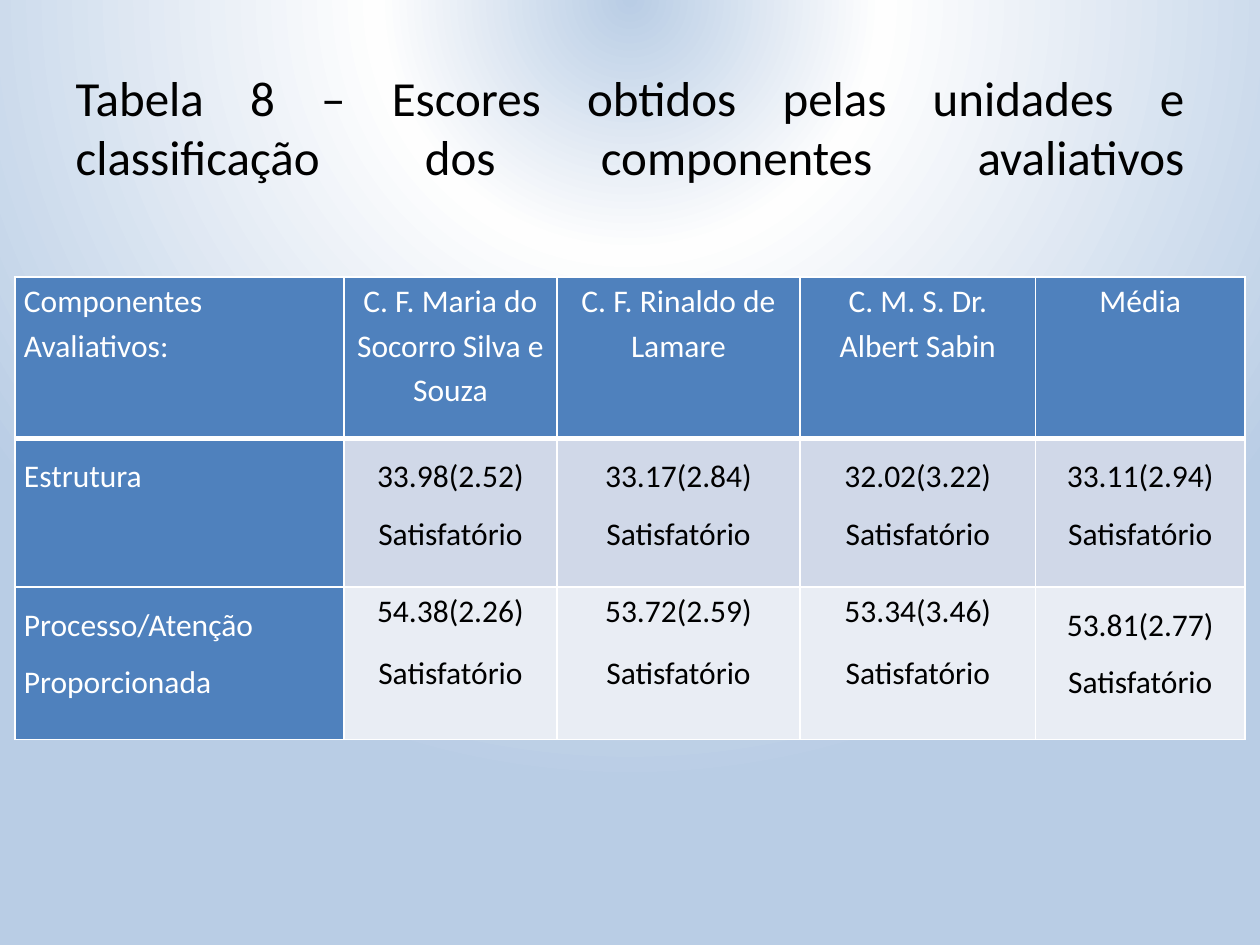
from lxml import etree
from pptx import Presentation
from pptx.dml.color import RGBColor
from pptx.enum.text import MSO_ANCHOR, PP_ALIGN
from pptx.oxml import parse_xml
from pptx.oxml.ns import nsdecls, qn
from pptx.util import Inches, Pt

LEFT, CENTER, JUSTIFY = PP_ALIGN.LEFT, PP_ALIGN.CENTER, PP_ALIGN.JUSTIFY
MIDDLE = MSO_ANCHOR.MIDDLE
TITLE_ONLY = 5
FONT = "Calibri"
COLORS = {
    "sky": "B9CDE5",
    "glow": "FEFEFE",
    "header": "4F81BD",
    "structure": "D0D8E8",
    "process": "E9EDF4",
    "light": "FFFFFF",
    "dark": "000000",
}

TITLE = "Tabela 8 – Escores obtidos pelas unidades e classificação dos componentes avaliativos"
HEADINGS = [
    "Componentes Avaliativos:",
    "C. F. Maria do Socorro Silva e Souza",
    "C. F. Rinaldo de Lamare",
    "C. M. S. Dr. Albert Sabin",
    "Média",
]
RATING = "Satisfatório"
COMPONENTS = [
    ("Estrutura", "structure",
     ["33.98(2.52)", "33.17(2.84)", "32.02(3.22)", "33.11(2.94)"]),
    ("Processo/Atenção Proporcionada", "process",
     ["54.38(2.26)", "53.72(2.59)", "53.34(3.46)", "53.81(2.77)"]),
]
COLUMN_WIDTHS = [2.61, 1.69, 1.93, 1.87, 1.66]
ROW_HEIGHTS = [1.28, 1.18, 1.21]


def rgb(name):
    return RGBColor.from_string(COLORS[name])


def set_background(slide):
    """Radial gradient centred above the top edge of the slide."""
    stops = "".join(
        f'<a:gs pos="{percent * 1000}"><a:srgbClr val="{COLORS[name]}"/></a:gs>'
        for percent, name in [(0, "sky"), (32, "glow"), (100, "sky")]
    )
    background = parse_xml(
        f'<p:bg {nsdecls("p", "a")}><p:bgPr><a:gradFill rotWithShape="1">'
        f'<a:gsLst>{stops}</a:gsLst><a:path path="circle">'
        '<a:fillToRect l="50000" t="-80000" r="50000" b="180000"/></a:path>'
        '</a:gradFill><a:effectLst/></p:bgPr></p:bg>'
    )
    slide.element.cSld.insert(0, background)


def style_paragraph(paragraph, size, color, align):
    paragraph.alignment = align
    font = paragraph.font
    font.name, font.size, font.bold = FONT, Pt(size), False
    font.color.rgb = rgb(color)


def add_title(slide, left, top, width, height):
    title = slide.shapes.title
    title.left, title.top = left, top
    title.width, title.height = width, height
    frame = title.text_frame
    frame.word_wrap = True
    frame.vertical_anchor = MIDDLE
    # The closing line break makes the last line stretch to both edges.
    frame.text = TITLE + "\v"
    style_paragraph(frame.paragraphs[0], 28, "dark", JUSTIFY)


def set_borders(cell, bottom=1):
    properties = cell._tc.get_or_add_tcPr()
    widths = {"lnL": 1, "lnR": 1, "lnT": 1, "lnB": bottom}
    for position, (side, width) in enumerate(widths.items()):
        line = etree.Element(qn(f"a:{side}"), w=str(Pt(width)))
        fill = etree.SubElement(line, qn("a:solidFill"))
        etree.SubElement(fill, qn("a:srgbClr"), val=COLORS["light"])
        properties.insert(position, line)


def fill_cell(cell, lines, fill, color, align, loose, bottom=1):
    """Loose text has 1.5 line spacing; other text has gaps after paragraphs."""
    cell.margin_left = cell.margin_right = Inches(0.07)
    cell.margin_top = cell.margin_bottom = 0
    cell.fill.solid()
    cell.fill.fore_color.rgb = rgb(fill)
    set_borders(cell, bottom)
    cell.text_frame.text = "\n".join(lines)
    for paragraph in cell.text_frame.paragraphs:
        style_paragraph(paragraph, 18, color, align)
        paragraph.line_spacing = 1.5 if loose else 1.15
        paragraph.space_after = Pt(0 if loose else 10)


def add_scores_table(slide, left, top, width, height):
    table = slide.shapes.add_table(
        len(ROW_HEIGHTS), len(COLUMN_WIDTHS), left, top, width, height
    ).table
    table.first_col = True
    for column, column_width in zip(table.columns, COLUMN_WIDTHS):
        column.width = Inches(column_width)
    for row, row_height in zip(table.rows, ROW_HEIGHTS):
        row.height = Inches(row_height)

    for c, heading in enumerate(HEADINGS):
        fill_cell(table.cell(0, c), [heading], "header", "light",
                  CENTER if c else LEFT, loose=False, bottom=3)
    mean_column = len(HEADINGS) - 1
    for r, (component, shade, scores) in enumerate(COMPONENTS, start=1):
        fill_cell(table.cell(r, 0), [component], "header", "light", JUSTIFY, loose=True)
        for c, score in enumerate(scores, start=1):
            loose = shade == "structure" or c == mean_column
            fill_cell(table.cell(r, c), [score, RATING], shade, "dark", CENTER, loose)


def main():
    presentation = Presentation()
    presentation.slide_width, presentation.slide_height = Inches(10), Inches(7.5)
    slide = presentation.slides.add_slide(presentation.slide_layouts[TITLE_ONLY])
    set_background(slide)
    add_title(slide, Inches(0.5), Inches(0.61), Inches(9), Inches(1.25))
    add_scores_table(slide, Inches(0.12), Inches(2.2), Inches(9.76), Inches(3.67))
    presentation.save("out.pptx")


if __name__ == "__main__":
    main()
